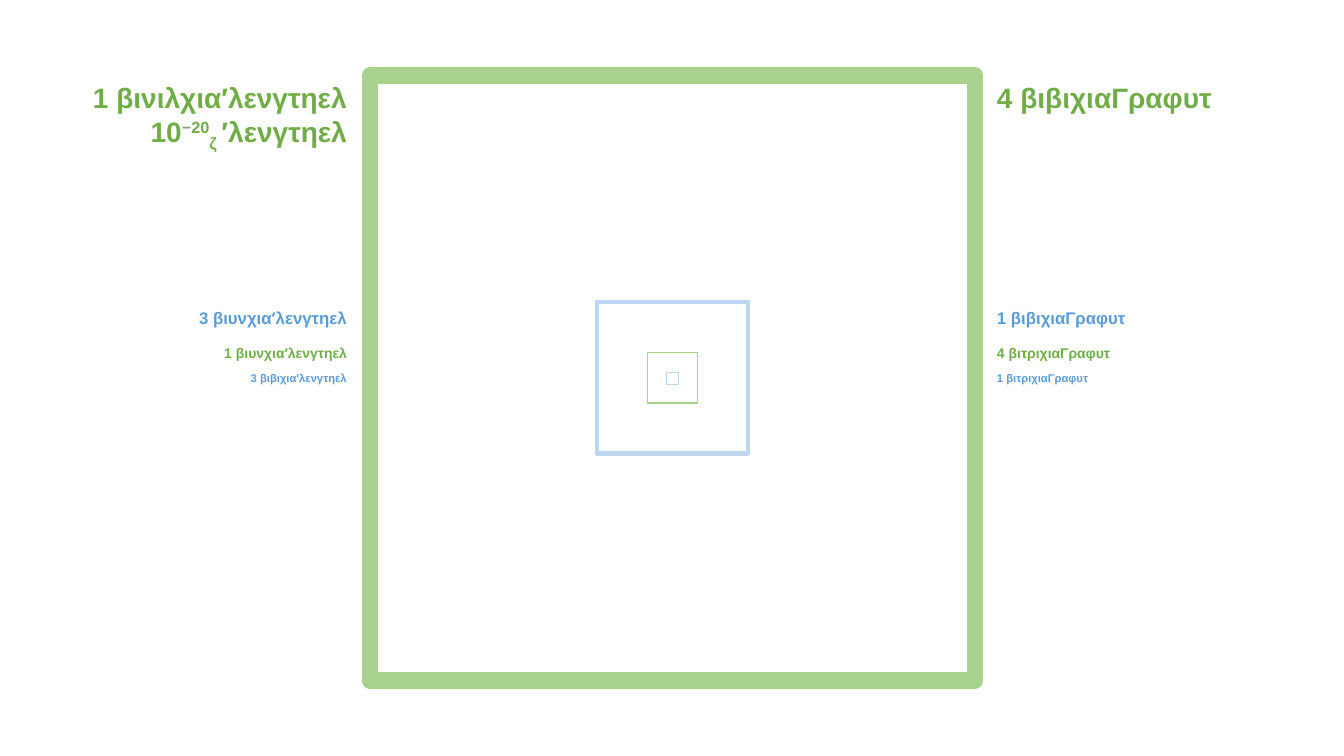
from pptx import Presentation
from pptx.dml.color import RGBColor
from pptx.enum.shapes import MSO_SHAPE as SHAPE
from pptx.enum.text import MSO_AUTO_SIZE as AUTO, PP_ALIGN as ALIGN
from pptx.util import Emu, Pt

EMU_PER_PX = 9144  # 100 px to the inch
WIDTH, HEIGHT = 1333, 750
CENTER_X, CENTER_Y = 667, 375
LEFT_EDGE, RIGHT_EDGE = 354, 979  # inner edges of the two label columns

COLORS = {
    "green": "70AD47",
    "blue": "5B9BD5",
    "gray": "89A27A",
    "light green": "A9D18E",
    "light blue": "BDD7EE",
}


def px(n):
    return Emu(n * EMU_PER_PX)


def rgb(name):
    return RGBColor.from_string(COLORS[name])


def add_run(p, text, size, color, baseline=0, font="Arial"):
    """Add a bold run; baseline is the percentage raised or lowered."""
    r = p.add_run()
    r.text = text
    r.font.name = font
    r.font.size = Pt(size)
    r.font.bold = True
    r.font.color.rgb = rgb(color)
    if baseline:
        r._r.get_or_add_rPr().set("baseline", str(baseline * 1000))


class SquaresSlide:
    """Nested squares with labels on both sides."""

    def __init__(self, prs):
        self.s = prs.slides.add_slide(prs.slide_layouts[6])

    def square(self, side, color, weight):
        sp = self.s.shapes.add_shape(
            SHAPE.RECTANGLE, px(CENTER_X - side // 2), px(CENTER_Y - side // 2),
            px(side), px(side))
        sp.shadow.inherit = False
        sp.fill.background()
        sp.line.color.rgb = rgb(color)
        sp.line.width = Pt(weight)

    def label(self, on_left, top, width, height, size, color, lines):
        """Add a label whose lines are lists of (text, format) pieces."""
        left = LEFT_EDGE - width if on_left else RIGHT_EDGE
        sp = self.s.shapes.add_textbox(px(left), px(top), px(width), px(height))
        tf = sp.text_frame
        tf.word_wrap = True
        tf.auto_size = AUTO.SHAPE_TO_FIT_TEXT
        p = tf.paragraphs[0]
        p.alignment = ALIGN.RIGHT if on_left else ALIGN.LEFT
        for i, pieces in enumerate(lines):
            if i:
                p.add_line_break()
            for text, fmt in pieces:
                add_run(p, text, **{"size": size, "color": color, **fmt})


def main():
    prs = Presentation()
    prs.slide_width, prs.slide_height = px(WIDTH), px(HEIGHT)
    slide = SquaresSlide(prs)

    for side, color, weight in [
        (50, "light green", 1),
        (150, "light blue", 3),
        (600, "light green", 12),
        (12, "light blue", 0.25),
    ]:
        slide.square(side, color, weight)

    slide.label(True, 75, 333, 77, 20, "green", [
        [("1 βινιλχια′λενγτηελ", {})],
        [("10", {}),
         ("−", {"color": "gray", "baseline": 30}),
         ("20", {"baseline": 30}),
         ("ζ ", {"baseline": -25}),
         ("′λενγτηελ", {})],
    ])
    slide.label(False, 75, 333, 44, 20, "green", [[("4 βιβιχιαΓραφυτ", {})]])

    for top, height, size, color, length, area in [
        (300, 30, 12, "blue", "3 βιυνχια′λενγτηελ", "1 βιβιχιαΓραφυτ"),
        (337, 27, 10, "green", "1 βιυνχια′λενγτηελ", "4 βιτριχιαΓραφυτ"),
        (363, 24, 8, "blue", "3 βιβιχια′λενγτηελ", "1 βιτριχιαΓραφυτ"),
    ]:
        for on_left, text in [(True, length), (False, area)]:
            slide.label(on_left, top, 196, height, size, color, [[(text, {})]])

    prs.save("out.pptx")


if __name__ == "__main__":
    main()
